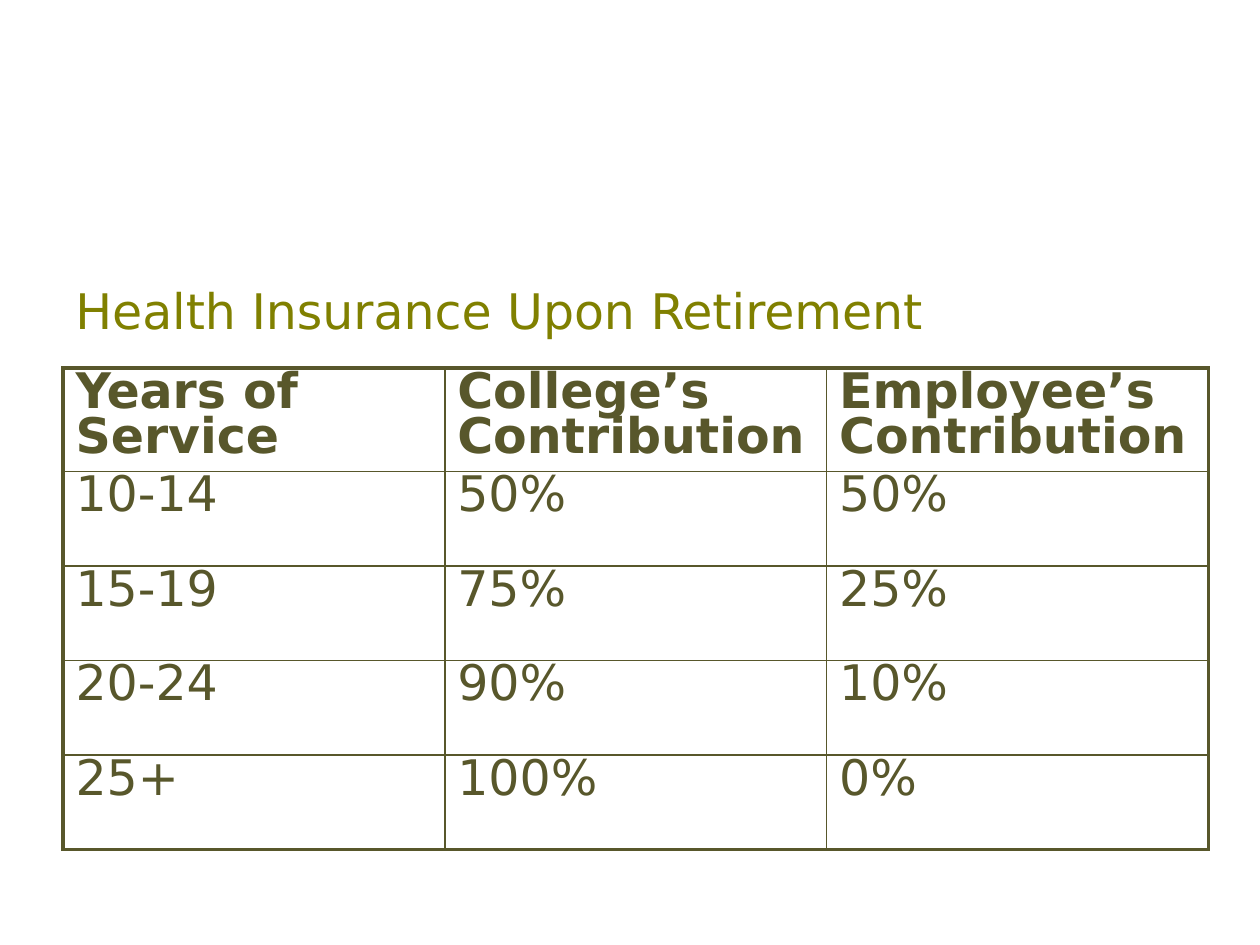
from dataclasses import astuple, dataclass

from lxml.etree import SubElement
from pptx import Presentation
from pptx.dml.color import RGBColor
from pptx.enum.text import MSO_ANCHOR
from pptx.oxml.ns import qn
from pptx.slide import Slide
from pptx.table import _Cell as Cell
from pptx.text.text import _Paragraph as Paragraph
from pptx.util import Inches, Pt

FONT = "DejaVu Sans"
OLIVE = RGBColor(0x80, 0x80, 0x00)
DARK_OLIVE = RGBColor(0x58, 0x57, 0x2B)
THIN, THICK = Pt(1), Pt(2.25)
LEFT, WIDTH = Inches(0.5), Inches(9.08)
COLUMN_WIDTH = Inches(3.03)
HEADER_HEIGHT, ROW_HEIGHT = Inches(0.82), Inches(0.75)


@dataclass
class Coverage:
    years: str
    college: str
    employee: str


COVERAGES = [
    Coverage("Years of Service", "College’s Contribution", "Employee’s Contribution"),
    Coverage("10-14", "50%", "50%"),
    Coverage("15-19", "75%", "25%"),
    Coverage("20-24", "90%", "10%"),
    Coverage("25+", "100%", "0%"),
]


def style_text(paragraph: Paragraph, color: RGBColor, bold: bool = False) -> None:
    font = paragraph.font
    font.name, font.size, font.bold = FONT, Pt(28), bold
    font.color.rgb = color


def add_border(cell: Cell, side: str, width: Pt) -> None:
    properties = cell._tc.get_or_add_tcPr()
    line = SubElement(properties, qn(f"a:ln{side}"), w=str(width))
    fill = SubElement(line, qn("a:solidFill"))
    SubElement(fill, qn("a:srgbClr"), val=str(DARK_OLIVE))


def add_title(slide: Slide, text: str) -> None:
    frame = slide.shapes.add_textbox(LEFT, Inches(2), WIDTH, Inches(0.92)).text_frame
    frame.word_wrap = True
    frame.vertical_anchor = MSO_ANCHOR.MIDDLE
    frame.text = text
    style_text(frame.paragraphs[0], OLIVE)


def add_coverage_table(slide: Slide, coverages: list[Coverage]) -> None:
    rows = [astuple(coverage) for coverage in coverages]
    last_row, last_column = len(rows) - 1, len(rows[0]) - 1
    height = HEADER_HEIGHT + last_row * ROW_HEIGHT
    table = slide.shapes.add_table(
        len(rows), len(rows[0]), LEFT, Inches(2.92), WIDTH, height
    ).table
    table.first_row = table.horz_banding = False
    for column in table.columns:
        column.width = COLUMN_WIDTH
    for row_index, texts in enumerate(rows):
        is_header = row_index == 0
        table.rows[row_index].height = HEADER_HEIGHT if is_header else ROW_HEIGHT
        for column_index, text in enumerate(texts):
            cell = table.cell(row_index, column_index)
            cell.text = text
            paragraph = cell.text_frame.paragraphs[0]
            paragraph.line_spacing, paragraph.space_after = Pt(26), Pt(6)
            style_text(paragraph, DARK_OLIVE, is_header)
            outer_sides = {
                "L": column_index == 0,
                "R": column_index == last_column,
                "T": is_header,
                "B": row_index == last_row,
            }
            for side, is_outer in outer_sides.items():
                add_border(cell, side, THICK if is_outer else THIN)
            cell.fill.background()


def main() -> None:
    presentation = Presentation()
    presentation.slide_width, presentation.slide_height = Inches(10), Inches(7.5)
    slide = presentation.slides.add_slide(presentation.slide_layouts[6])
    add_title(slide, "Health Insurance Upon Retirement")
    add_coverage_table(slide, COVERAGES)
    presentation.save("out.pptx")


if __name__ == "__main__":
    main()
